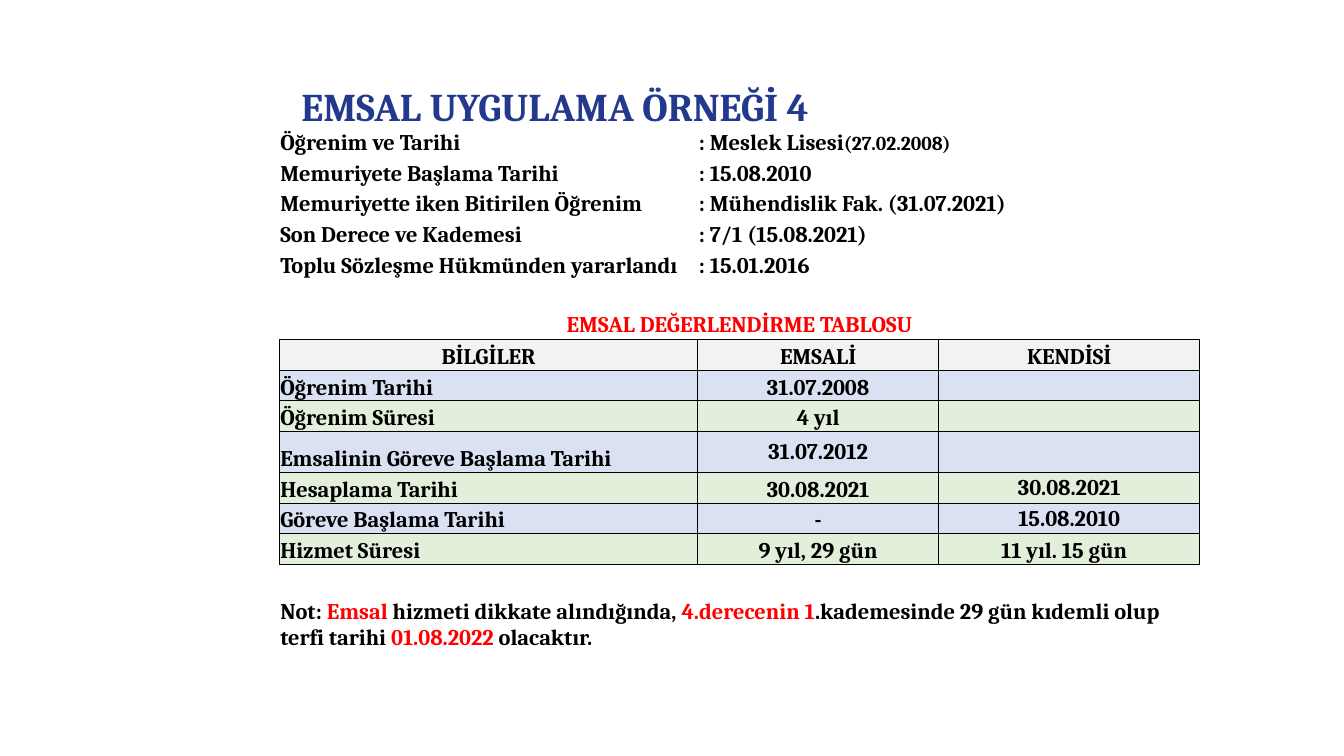
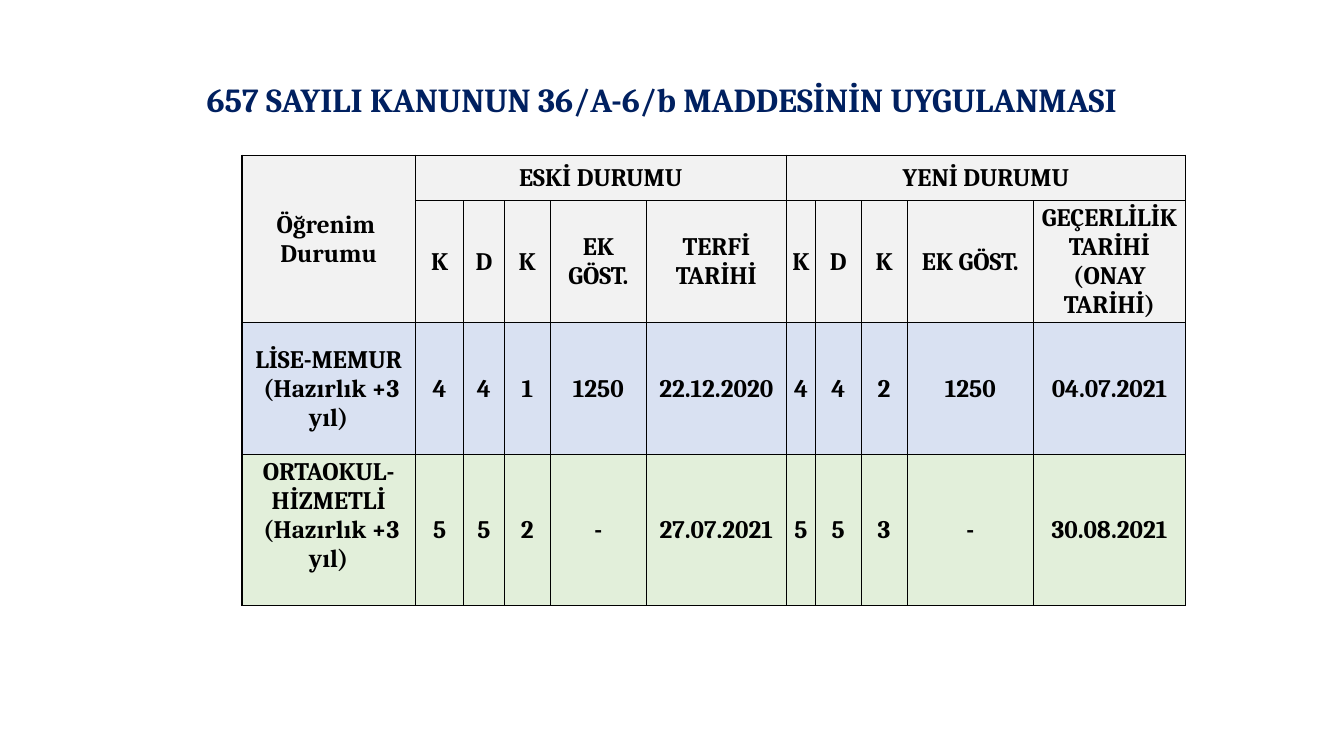
import pptx
import pptx.util
import pptx.dml.color
import pptx.enum.text
import pptx.oxml
import pptx.oxml.ns
import lxml.etree

Inches = pptx.util.Inches
Pt = pptx.util.Pt
rgb = pptx.dml.color.RGBColor.from_string
ANCHOR = pptx.enum.text.MSO_ANCHOR
ALIGN = pptx.enum.text.PP_ALIGN

FONT = "Cambria"
BLACK, RED = "000000", "FF0000"
GREY, BLUE, GREEN = "F2F2F2", "D9E1F2", "E2EFDA"

deck = pptx.Presentation()
deck.slide_width, deck.slide_height = Inches(13.33), Inches(7.5)


def add_table_slide(heading, size, color, heading_box, table_box, widths, heights):
    slide = deck.slides.add_slide(deck.slide_layouts[5])
    title = slide.shapes.title
    title.left, title.top, title.width, title.height = map(Inches, heading_box)
    frame = title.text_frame
    frame.word_wrap = True
    frame.auto_size = pptx.enum.text.MSO_AUTO_SIZE.NONE
    frame.vertical_anchor = ANCHOR.TOP
    paragraph = frame.paragraphs[0]
    paragraph.text = heading
    paragraph.alignment = ALIGN.LEFT
    paragraph.line_spacing = 1.5
    paragraph.font.name, paragraph.font.size, paragraph.font.bold = FONT, Pt(size), True
    paragraph.font.color.rgb = rgb(color)
    table = slide.shapes.add_table(len(heights), len(widths), *map(Inches, table_box)).table
    table.first_row = table.horz_banding = False
    for column, width in zip(table.columns, widths):
        column.width = Inches(width)
    for row, height in zip(table.rows, heights):
        row.height = Inches(height)
    return table


def format_cell(cell, runs, size, align, anchor, fill, borders):
    cell.margin_left = cell.margin_right = cell.margin_top = Inches(0.01)
    cell.margin_bottom = 0
    cell.vertical_anchor = anchor
    paragraph = cell.text_frame.paragraphs[0]
    paragraph.alignment = align
    paragraph.font.name, paragraph.font.size, paragraph.font.bold = FONT, Pt(size), True
    paragraph.font.color.rgb = rgb(BLACK)
    if isinstance(runs, str):
        paragraph.text = runs
    else:
        for text, run_size, color in runs:
            run = paragraph.add_run()
            run.text = text
            run.font.size = Pt(run_size)
            run.font.color.rgb = rgb(color)
    properties = cell._tc.get_or_add_tcPr()
    for side in "LRTB":
        line = lxml.etree.SubElement(properties, pptx.oxml.ns.qn(f"a:ln{side}"))
        if side in borders:
            line.set("w", str(Pt(borders[side])))
            solid = lxml.etree.SubElement(line, pptx.oxml.ns.qn("a:solidFill"))
            lxml.etree.SubElement(solid, pptx.oxml.ns.qn("a:srgbClr"), val=BLACK)
        else:
            lxml.etree.SubElement(line, pptx.oxml.ns.qn("a:noFill"))
    if fill:
        cell.fill.solid()
        cell.fill.fore_color.rgb = rgb(fill)
    else:
        cell.fill.background()


case_rows = [
    ["Öğrenim ve Tarihi", [(": Meslek Lisesi", 16, BLACK), ("(27.02.2008)", 14, BLACK)]],
    ["Memuriyete Başlama Tarihi", ": 15.08.2010"],
    ["Memuriyette iken Bitirilen Öğrenim", ": Mühendislik Fak. (31.07.2021)"],
    ["Son Derece ve Kademesi", ": 7/1 (15.08.2021)"],
    ["Toplu Sözleşme Hükmünden yararlandı", ": 15.01.2016"],
    [],
    [[("EMSAL DEĞERLENDİRME TABLOSU", 16, RED)]],
    ["BİLGİLER", "EMSALİ", "KENDİSİ"],
    ["Öğrenim Tarihi", "31.07.2008"],
    ["Öğrenim Süresi", "4 yıl"],
    ["Emsalinin Göreve Başlama Tarihi", "31.07.2012"],
    ["Hesaplama Tarihi", "30.08.2021", "30.08.2021"],
    ["Göreve Başlama Tarihi", "-", "15.08.2010"],
    ["Hizmet Süresi", "9 yıl, 29 gün", "11 yıl. 15 gün"],
    [],
    [[("Not: ", 16, BLACK), ("Emsal", 16, RED), (" hizmeti dikkate alındığında, ", 16, BLACK),
      ("4.derecenin 1", 16, RED), (".kademesinde 29 gün kıdemli olup terfi tarihi ", 16, BLACK),
      ("01.08.2022 ", 16, RED), ("olacaktır.", 16, BLACK)]],
]
caption_row, header_row, last_grid_row, note_row = 6, 7, 13, 15
case_height, tall_row, note_height = 5.25, 0.41, 0.6
case_heights = [(case_height - tall_row - note_height) / 14] * 16
case_heights[10], case_heights[note_row] = tall_row, note_height
case_table = add_table_slide(
    "EMSAL UYGULAMA ÖRNEĞİ 4", 28, "23398E", (2.89, 0.53, 10.44, 0.72),
    (2.77, 1.25, 9.13, case_height), [4.15, 2.39, 0.43, 2.16], case_heights)
case_spans = {0: (1, 2), 1: (1, 2), 2: (1, 3), caption_row: (0, 3), note_row: (0, 3)}
middle_cells = [(caption_row, 0), (note_row, 0), (10, 1), (11, 2), (12, 2)]

for r, texts in enumerate(case_rows):
    in_grid = header_row <= r <= last_grid_row
    if in_grid:
        borders = dict.fromkeys("LRTB", 0.5)
        fill = GREY if r == header_row else (BLUE, GREEN)[r % 2]
    else:
        borders = {caption_row: {"B": 0.5}, last_grid_row + 1: {"T": 0.5}}.get(r, {})
        fill = None
    for c in range(4):
        centred = r in (caption_row, header_row) or in_grid and c > 0
        format_cell(case_table.cell(r, c), texts[c] if c < len(texts) else "", 16,
                    ALIGN.CENTER if centred else ALIGN.LEFT,
                    ANCHOR.MIDDLE if (r, c) in middle_cells else ANCHOR.BOTTOM, fill, borders)
    first, last = case_spans.get(r, (2, 3))
    case_table.cell(r, first).merge(case_table.cell(r, last))
case_table.cell(last_grid_row, 2).margin_right = Inches(0.11)

status_rows = [
    ["Öğrenim \vDurumu", "ESKİ DURUMU", "", "", "", "", "YENİ DURUMU", "", "", "", ""],
    ["", "K", "D", "K", "EK GÖST.", "TERFİ TARİHİ",
     "K", "D", "K", "EK GÖST.", "GEÇERLİLİK TARİHİ\v(ONAY TARİHİ)"],
    ["LİSE-MEMUR\v (Hazırlık +3 yıl)", "4", "4", "1", "1250", "22.12.2020",
     "4", "4", "2", "1250", "04.07.2021"],
    ["ORTAOKUL-HİZMETLİ\v (Hazırlık +3 yıl)", "5", "5", "2", "-", "27.07.2021",
     "5", "5", "3", "-", "30.08.2021"],
]
status_table = add_table_slide(
    "657 SAYILI KANUNUN 36/A-6/b MADDESİNİN UYGULANMASI", 24, "002060",
    (1.95, 0.53, 11.38, 0.63), (2.4, 1.54, 9.37, 4.47),
    [1.72, 0.48, 0.4, 0.46, 0.95, 1.39, 0.29, 0.45, 0.46, 1.25, 1.51],
    [0.45, 1.21, 1.31, 1.5])

for r, (texts, fill) in enumerate(zip(status_rows, [GREY, GREY, BLUE, GREEN])):
    for c, text in enumerate(texts):
        borders = {"L": 1 if c in (0, 1, 6) else 0.5, "R": 1 if c in (0, 5, 10) else 0.5,
                   "T": 1 if r == 0 else 0.5, "B": 0.5}
        format_cell(status_table.cell(r, c), text, 18, ALIGN.CENTER, ANCHOR.MIDDLE, fill, borders)
for top, left, bottom, right in [(0, 0, 1, 0), (0, 1, 0, 5), (0, 6, 0, 10)]:
    status_table.cell(top, left).merge(status_table.cell(bottom, right))
status_table.cell(3, 0).margin_bottom = Inches(0.29)

deck.save("out.pptx")
